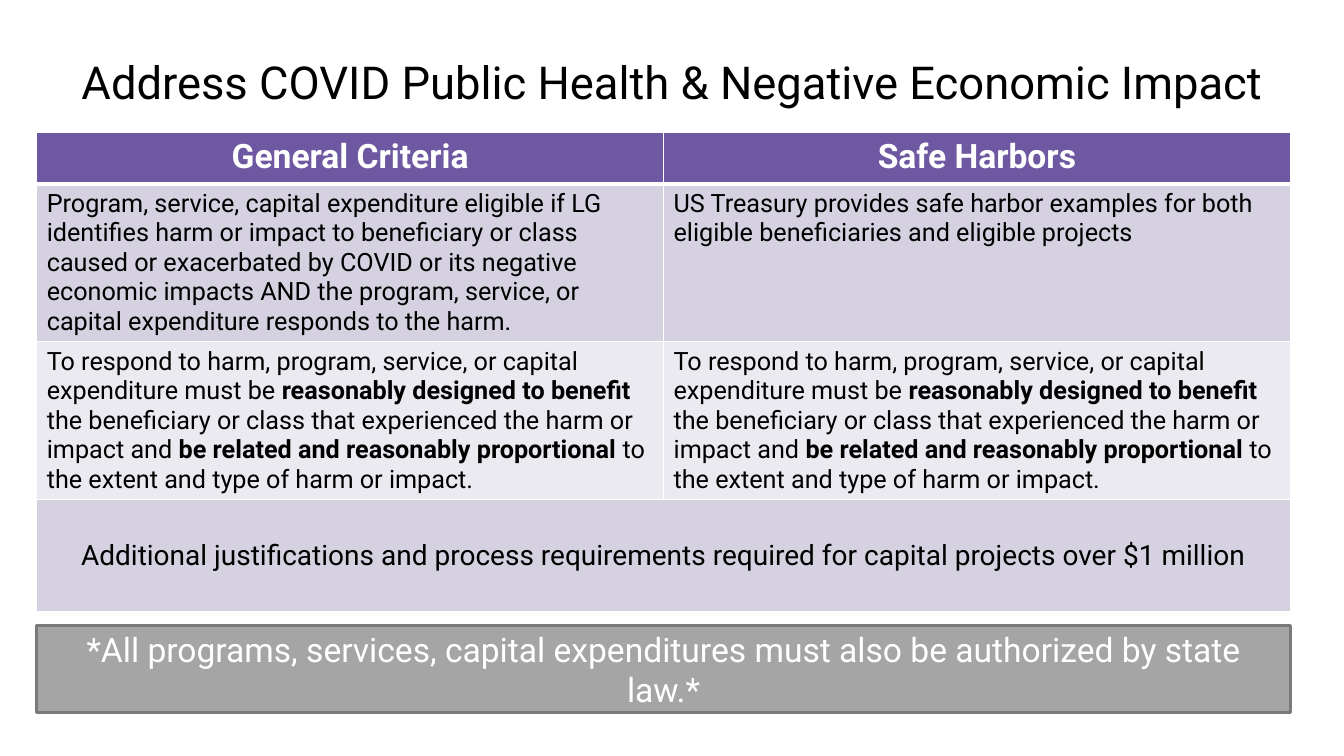
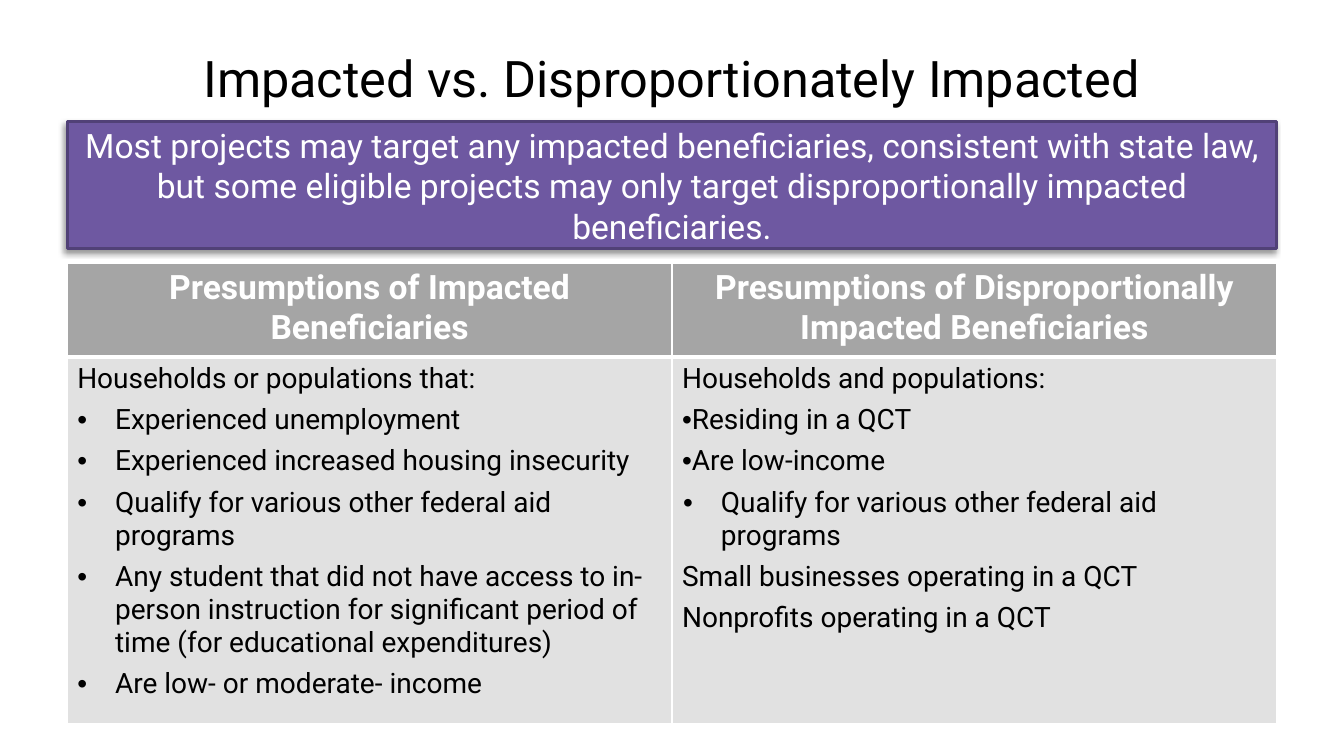
from dataclasses import dataclass

from lxml.etree import SubElement
from pptx import Presentation
from pptx.dml.color import RGBColor
from pptx.enum.shapes import MSO_SHAPE as Shape
from pptx.enum.text import MSO_ANCHOR as Anchor, MSO_AUTO_SIZE as AutoSize, PP_ALIGN as Align
from pptx.oxml import parse_xml
from pptx.oxml.ns import nsdecls, qn
from pptx.util import Pt

EMU_PER_PX = 9525
FONT = "Roboto"
BLACK, WHITE = "000000", "FFFFFF"
PURPLE, PURPLE_EDGE, PURPLE_MID, PURPLE_PALE = "6E58A1", "514177", "D5D1E0", "EBEAF0"
GRAY, GRAY_EDGE, GRAY_PALE = "A5A5A5", "7A7A7A", "E1E1E1"


@dataclass(frozen=True)
class Box:
    x: int
    y: int
    w: int
    h: int


@dataclass(frozen=True)
class Run:
    text: str
    bold: bool = False


@dataclass(frozen=True)
class Para:
    runs: tuple[Run, ...]
    margin: int = 0
    bullet: bool = False


@dataclass(frozen=True)
class Style:
    size: float
    color: str = BLACK
    bold: bool = False
    align: Align = Align.LEFT
    before: int = 0


@dataclass(frozen=True)
class Row:
    height: int
    fill: str
    style: Style
    cells: tuple[tuple[Para, ...], ...]
    rule: int = 1


@dataclass(frozen=True)
class Banner:
    box: Box
    text: str
    fill: str
    edge: str
    shadow: bool = False


HEADER = Style(24, WHITE, True, Align.CENTER)
BANNER = Style(24, WHITE, align=Align.CENTER)


def px(n: int) -> int:
    return n * EMU_PER_PX


def rgb(color: str) -> RGBColor:
    return RGBColor.from_string(color)


def para(text: str) -> Para:
    return Para((Run(text),))


def bullet(text: str, margin: int = 36) -> Para:
    return Para((Run(text),), margin, True)


def write(tf, paras: tuple[Para, ...], style: Style) -> None:
    tf.word_wrap = True
    for i, item in enumerate(paras):
        p = tf.paragraphs[0] if i == 0 else tf.add_paragraph()
        p.alignment = style.align
        p.space_before = Pt(style.before)
        if item.bullet:
            pPr = p._p.get_or_add_pPr()
            pPr.set("marL", str(px(item.margin)))
            pPr.set("indent", str(px(-36)))
            SubElement(pPr, qn("a:buFont")).set("typeface", "Arial")
            SubElement(pPr, qn("a:buChar")).set("char", "•")
        for run in item.runs:
            r = p.add_run()
            r.text = run.text
            r.font.name = FONT
            r.font.size = Pt(style.size)
            r.font.bold = style.bold or run.bold
            r.font.color.rgb = rgb(style.color)


def add_slide(prs, title: str, top: int, size: float):
    s = prs.slides.add_slide(prs.slide_layouts[5])
    sp = s.shapes.title
    sp.left, sp.top, sp.width, sp.height = px(64), px(top), px(1152), px(75)
    tf = sp.text_frame
    tf.margin_left = tf.margin_right = 0
    tf.margin_top = tf.margin_bottom = px(7)
    tf.auto_size = AutoSize.NONE
    tf.vertical_anchor = Anchor.MIDDLE
    write(tf, (para(title),), Style(size, align=Align.CENTER))
    return s


def set_borders(cell, bottom: int) -> None:
    tcPr = cell._tc.get_or_add_tcPr()
    for i, (side, width) in enumerate((("L", 1), ("R", 1), ("T", 1), ("B", bottom))):
        tcPr.insert(i, parse_xml(
            f'<a:ln{side} {nsdecls("a")} w="{Pt(width)}"><a:solidFill>'
            f'<a:srgbClr val="{WHITE}"/></a:solidFill></a:ln{side}>'))


def add_table(s, x: int, y: int, w: int, rows: tuple[Row, ...]) -> None:
    columns = 2
    height = sum(row.height for row in rows)
    table = s.shapes.add_table(len(rows), columns, px(x), px(y), px(w), px(height)).table
    for column in table.columns:
        column.width = px(w // columns)
    for i, row in enumerate(rows):
        table.rows[i].height = px(row.height)
        for j in range(columns):
            cell = table.cell(i, j)
            cell.fill.solid()
            cell.fill.fore_color.rgb = rgb(row.fill)
            set_borders(cell, row.rule)
        if len(row.cells) < columns:
            table.cell(i, 0).merge(table.cell(i, columns - 1))
            table.cell(i, 0).vertical_anchor = Anchor.MIDDLE
        for j, paras in enumerate(row.cells):
            write(table.cell(i, j).text_frame, paras, row.style)


def add_banner(s, banner: Banner) -> None:
    b = banner.box
    sp = s.shapes.add_shape(Shape.RECTANGLE, px(b.x), px(b.y), px(b.w), px(b.h))
    sp.fill.solid()
    sp.fill.fore_color.rgb = rgb(banner.fill)
    sp.line.color.rgb = rgb(banner.edge)
    sp.line.width = Pt(2)
    sp.shadow.inherit = False
    if banner.shadow:
        sp._element.spPr.find(qn("a:effectLst")).append(parse_xml(
            f'<a:outerShdw {nsdecls("a")} blurRad="{Pt(4)}" dist="{Pt(3)}" dir="{135 * 60000}" '
            f'algn="tr" rotWithShape="0"><a:srgbClr val="{BLACK}">'
            '<a:alpha val="40000"/></a:srgbClr></a:outerShdw>'))
    sp.text_frame.vertical_anchor = Anchor.MIDDLE
    write(sp.text_frame, (para(banner.text),), BANNER)


def build_criteria(prs) -> None:
    s = add_slide(prs, "Address COVID Public Health & Negative Economic Impact", 40, 32.4)
    body = Style(18)
    response = Para((
        Run("To respond to harm, program, service, or capital expenditure must be "),
        Run("reasonably designed to benefit", True),
        Run(" the beneficiary or class that experienced the harm or impact and "),
        Run("be related and reasonably proportional ", True),
        Run("to the extent and type of harm or impact."),
    ))
    add_table(s, 35, 126, 1194, (
        Row(49, PURPLE, HEADER, ((para("General Criteria"),), (para("Safe Harbors"),)), 3),
        Row(150, PURPLE_MID, body, (
            (para("Program, service, capital expenditure eligible if LG identifies harm or impact "
                  "to beneficiary or class caused or exacerbated by COVID or its negative economic "
                  "impacts AND the program, service, or capital expenditure responds to the harm."),),
            (para("US Treasury provides safe harbor examples for both eligible beneficiaries "
                  "and eligible projects"),),
        )),
        Row(150, PURPLE_PALE, body, ((response,), (response,))),
        Row(107, PURPLE_MID, Style(20, align=Align.CENTER), (
            (para("Additional justifications and process requirements required for capital "
                  "projects over $1 million"),),
        )),
    ))
    add_banner(s, Banner(
        Box(35, 596, 1194, 83),
        "*All programs, services, capital expenditures must also be authorized by state law.*",
        GRAY, GRAY_EDGE))


def build_beneficiaries(prs) -> None:
    s = add_slide(prs, "Impacted vs. Disproportionately Impacted", 36, 36)
    add_table(s, 64, 251, 1152, (
        Row(89, GRAY, HEADER, (
            (para("Presumptions of Impacted Beneficiaries"),),
            (para("Presumptions of Disproportionally Impacted Beneficiaries"),),
        ), 3),
        Row(349, GRAY_PALE, Style(20, before=6), (
            (
                para("Households or populations that:"),
                bullet("Experienced unemployment"),
                bullet("Experienced increased housing insecurity"),
                bullet("Qualify for various other federal aid programs"),
                bullet("Any student that did not have access to in-person instruction for "
                       "significant period of time (for educational expenditures)"),
                bullet("Are low- or moderate- income"),
            ),
            (
                para("Households and populations:"),
                bullet("Residing in a QCT", 0),
                bullet("Are low-income", 0),
                bullet("Qualify for various other federal aid programs", 37),
                para("Small businesses operating in a QCT"),
                para("Nonprofits operating in a QCT"),
            ),
        )),
    ))
    add_banner(s, Banner(
        Box(64, 116, 1152, 121),
        "Most projects may target any impacted beneficiaries, consistent with state law, but some "
        "eligible projects may only target disproportionally impacted beneficiaries.",
        PURPLE, PURPLE_EDGE, True))


def main() -> None:
    prs = Presentation()
    prs.slide_width, prs.slide_height = px(1280), px(720)
    build_criteria(prs)
    build_beneficiaries(prs)
    prs.save("out.pptx")


if __name__ == "__main__":
    main()
